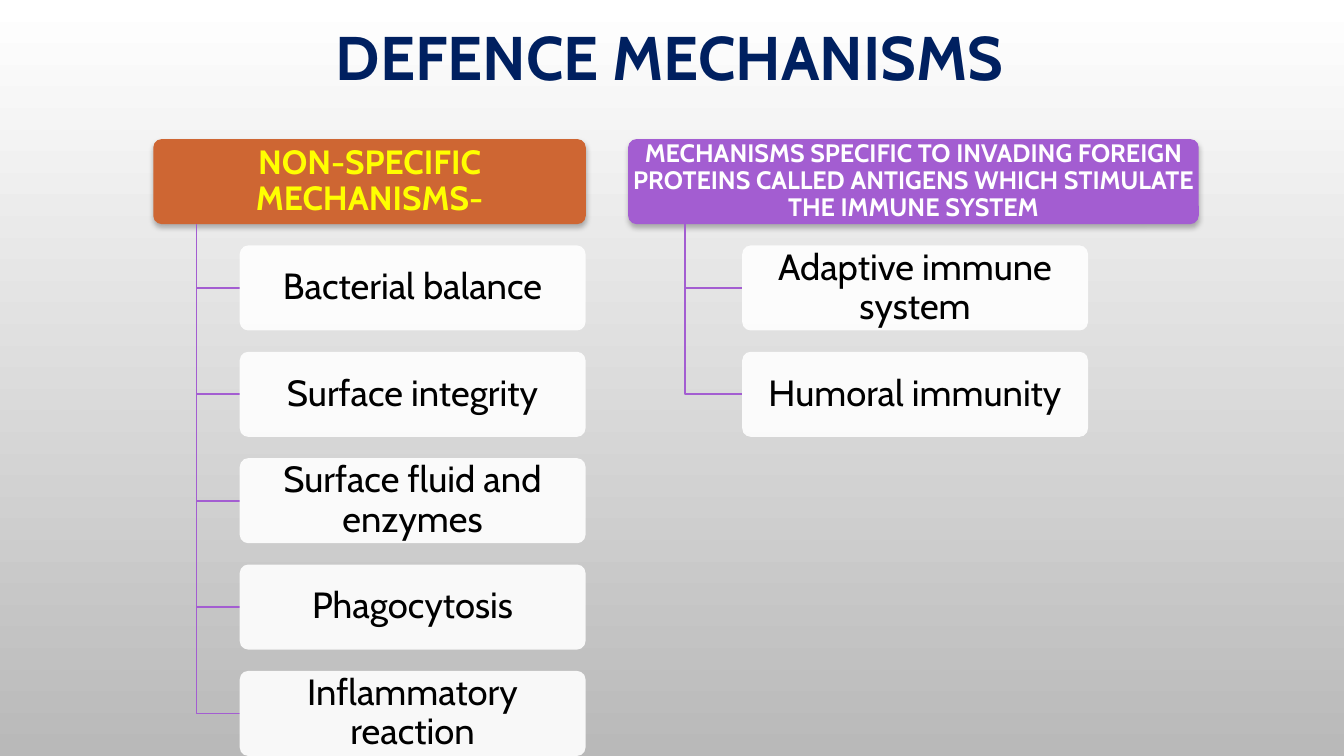
import lxml.etree
import pptx
import pptx.dml.color
import pptx.enum.shapes
import pptx.enum.text
import pptx.oxml.ns
import pptx.util

TITLE = "DEFENCE MECHANISMS"
BRANCHES = [
    {
        "header": "NON-SPECIFIC MECHANISMS-",
        "left": 1.52, "width": 4.29, "fill": "CE6633", "color": "FFFF00", "size": 24,
        "items": ["Bacterial balance", "Surface integrity", "Surface fluid and enzymes",
                  "Phagocytosis", "Inflammatory reaction"],
    },
    {
        "header": "MECHANISMS SPECIFIC TO INVADING FOREIGN PROTEINS CALLED ANTIGENS "
                  "WHICH STIMULATE THE IMMUNE SYSTEM",
        "left": 6.23, "width": 5.66, "fill": "A35DD1", "color": "FFFFFF", "size": 18,
        "items": ["Adaptive immune system", "Humoral immunity"],
    },
]
BACKGROUND = ["FFFFFF", "B9B9B9"]
SLIDE_WIDTH, SLIDE_HEIGHT = 13.33, 7.5
TREE_TOP, ITEM_WIDTH, GAP_SHARE = 1.38, 3.43, 0.25
ROWS = 1 + max(len(branch["items"]) for branch in BRANCHES)
BOX_HEIGHT = (SLIDE_HEIGHT - TREE_TOP) / (ROWS + (ROWS - 1) * GAP_SHARE)
ROW_PITCH = BOX_HEIGHT * (1 + GAP_SHARE)


def rgb(value):
    return pptx.dml.color.RGBColor.from_string(value)


def inches(*values):
    return [pptx.util.Inches(value) for value in values]


def write_text(shape, text, size, color, bold=False, inset=0.02):
    frame = shape.text_frame
    frame.word_wrap = True
    frame.vertical_anchor = pptx.enum.text.MSO_ANCHOR.MIDDLE
    frame.margin_left, frame.margin_right, frame.margin_top, frame.margin_bottom = inches(*[inset] * 4)
    paragraph = frame.paragraphs[0]
    paragraph.alignment = pptx.enum.text.PP_ALIGN.CENTER
    paragraph.line_spacing = 0.9
    run = paragraph.add_run()
    run.text = text
    run.font.name = "Cabin"
    run.font.size = pptx.util.Pt(size)
    run.font.bold = bold
    run.font.color.rgb = rgb(color)


def add_box(slide, left, top, width, fill):
    shape = slide.shapes.add_shape(pptx.enum.shapes.MSO_SHAPE.ROUNDED_RECTANGLE,
                                   *inches(left, top, width, BOX_HEIGHT))
    shape.adjustments[0] = 0.1
    shape.shadow.inherit = False
    shape.fill.solid()
    shape.fill.fore_color.rgb = rgb(fill)
    shape.line.fill.background()
    return shape


def add_alpha(color_element, percent):
    lxml.etree.SubElement(color_element, pptx.oxml.ns.qn("a:alpha"), val=str(percent * 1000))


def add_shadow(shape):
    qn = pptx.oxml.ns.qn
    effects = shape._element.spPr.find(qn("a:effectLst"))
    shadow = lxml.etree.SubElement(effects, qn("a:outerShdw"), blurRad=str(pptx.util.Pt(4)),
                                   dist=str(pptx.util.Pt(2)), dir="5400000", rotWithShape="0")
    add_alpha(lxml.etree.SubElement(shadow, qn("a:srgbClr"), val="000000"), 28)


def add_elbow(slide, left, top, right, bottom):
    builder = slide.shapes.build_freeform(*inches(left, top))
    builder.add_line_segments([inches(left, bottom), inches(right, bottom)], close=False)
    elbow = builder.convert_to_shape()
    elbow.shadow.inherit = False
    elbow.fill.background()
    elbow.line.color.rgb = rgb("A35DD1")
    elbow.line.width = pptx.util.Pt(1.25)


def add_branch(slide, branch):
    left, width = branch["left"], branch["width"]
    indent = width / 10
    header = add_box(slide, left, TREE_TOP, width, branch["fill"])
    add_shadow(header)
    write_text(header, branch["header"], branch["size"], branch["color"], bold=True, inset=0.01)
    for row, item in enumerate(branch["items"], start=1):
        top = TREE_TOP + row * ROW_PITCH
        add_elbow(slide, left + indent, TREE_TOP + BOX_HEIGHT, left + 2 * indent, top + BOX_HEIGHT / 2)
        box = add_box(slide, left + 2 * indent, top, ITEM_WIDTH, "FFFFFF")
        add_alpha(box._element.spPr.find(".//" + pptx.oxml.ns.qn("a:srgbClr")), 90)
        write_text(box, item, 26, "000000")


def main():
    presentation = pptx.Presentation()
    presentation.slide_width, presentation.slide_height = inches(SLIDE_WIDTH, SLIDE_HEIGHT)
    slide = presentation.slides.add_slide(presentation.slide_layouts[6])
    fill = slide.background.fill
    fill.gradient()
    fill.gradient_angle = 270
    for stop, color in zip(fill.gradient_stops, BACKGROUND):
        stop.color.rgb = rgb(color)
    title = slide.shapes.add_textbox(*inches(0.98, 0.22, 11.33, 0.77))
    write_text(title, TITLE, 44, "002060", bold=True)
    for branch in BRANCHES:
        add_branch(slide, branch)
    presentation.save("out.pptx")


if __name__ == "__main__":
    main()
